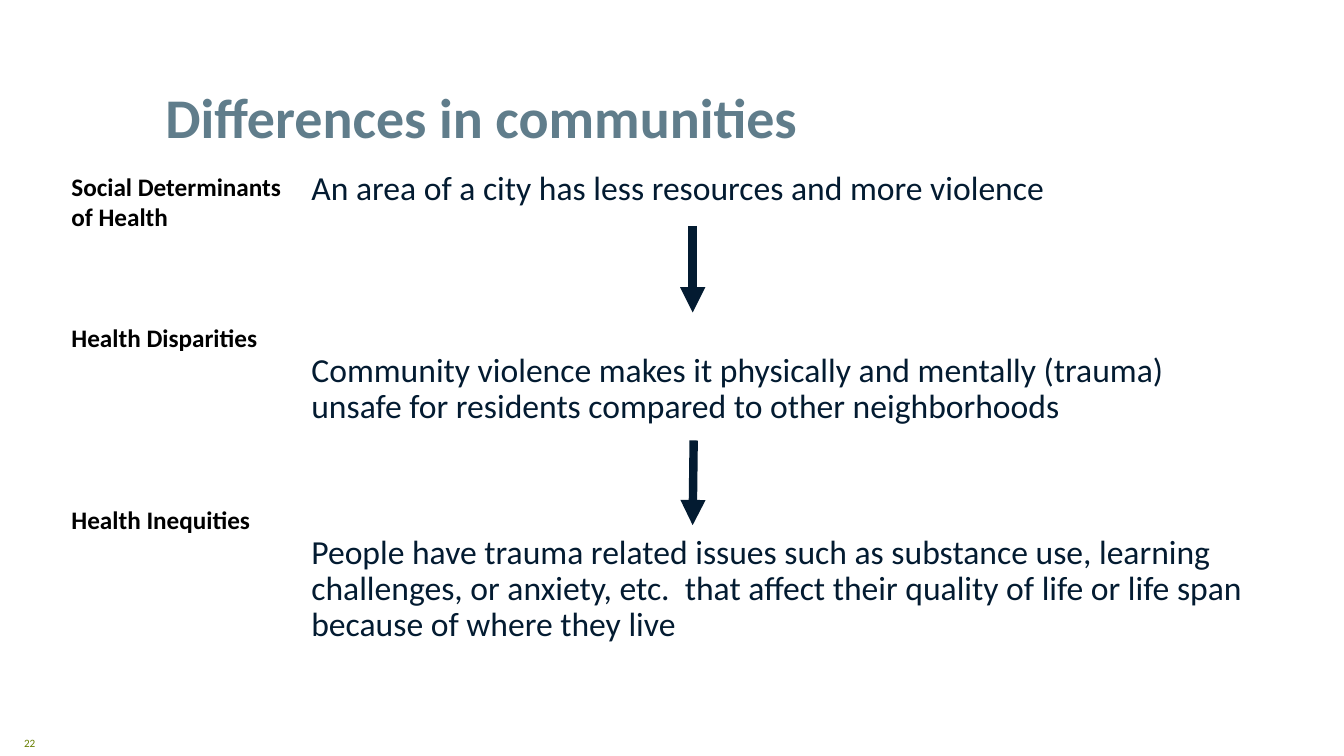
from lxml import etree
from pptx import Presentation
from pptx.dml.color import RGBColor
from pptx.enum.shapes import MSO_CONNECTOR
from pptx.enum.text import MSO_ANCHOR, MSO_AUTO_SIZE, PP_ALIGN
from pptx.oxml.ns import qn
from pptx.util import Pt

PX = 9144  # 100 px to the inch
FONT = "Calibri"
COLORS = {"title": "607D8B", "body": "031B31", "label": "000000", "page": "687F00"}
TOP, MIDDLE, BOTTOM = MSO_ANCHOR.TOP, MSO_ANCHOR.MIDDLE, MSO_ANCHOR.BOTTOM
LEFT, RIGHT = PP_ALIGN.LEFT, PP_ALIGN.RIGHT
FIXED = MSO_AUTO_SIZE.NONE
LINE = MSO_CONNECTOR.STRAIGHT

# Each paragraph is its text and the gap above it in points
LABELS = [
    ("Social Determinants", 0),
    ("of Health", 0),
    ("Health Disparities", 65),
    ("Health Inequities", 108),
]
STEPS = [
    ("An area of a city has less resources and more violence", 0),
    ("Community violence makes it physically and mentally (trauma) "
     "unsafe for residents compared to other neighborhoods", 104),
    ("People have trauma related issues such as substance use, learning "
     "challenges, or anxiety, etc.  that affect their quality of life or "
     "life span because of where they live", 78),
]
ARROWS = [(687, 224, 687, 310), (688, 437, 687, 521)]


def place(shape, box):
    shape.left, shape.top, shape.width, shape.height = (v * PX for v in box)


def write(shape, paras, size, color, bold=False, align=LEFT,
          anchor=TOP, spacing=1.0, pad=10):
    frame = shape.text_frame
    frame.word_wrap = True
    frame.auto_size = FIXED
    frame.vertical_anchor = anchor
    frame.margin_left = frame.margin_right = 10 * PX
    frame.margin_top = frame.margin_bottom = pad * PX
    for i, (text, gap) in enumerate(paras):
        para = frame.add_paragraph() if i else frame.paragraphs[0]
        para.alignment = align
        para.line_spacing = spacing
        para.space_before = Pt(gap)
        run = para.add_run()
        run.text = text
        font = run.font
        font.name, font.size, font.bold = FONT, Pt(size), bold
        font.color.rgb = RGBColor.from_string(COLORS[color])


def add_text(slide, box, paras, **style):
    shape = slide.shapes.add_textbox(*(v * PX for v in box))
    write(shape, paras, **style)


def add_arrow(slide, ends):
    arrow = slide.shapes.add_connector(LINE, *(v * PX for v in ends))
    arrow.line.width = Pt(6)
    arrow.line.color.rgb = RGBColor.from_string(COLORS["body"])
    props = arrow.line._get_or_add_ln()
    etree.SubElement(props, qn("a:tailEnd"), type="triangle")
    etree.SubElement(arrow._element.spPr, qn("a:effectLst"))


def main():
    deck = Presentation()
    deck.slide_width, deck.slide_height = 1333 * PX, 750 * PX
    slide = deck.slides.add_slide(deck.slide_layouts[5])

    # Title
    title = slide.shapes.title
    place(title, (154, 30, 1025, 129))
    write(title, [("Differences in communities", 0)], size=40,
          color="title", bold=True, anchor=BOTTOM)

    # Steps, with the page number below
    add_text(slide, (299, 160, 956, 555), STEPS, size=24,
             color="body", spacing=0.9)
    add_text(slide, (0, 725, 45, 25), [("22", 0)], size=8, color="page",
             align=RIGHT, anchor=MIDDLE, pad=5)

    # Arrows between the steps
    for ends in ARROWS:
        add_arrow(slide, ends)

    # Labels at the left
    add_text(slide, (61, 160, 238, 484), LABELS, size=18,
             color="label", bold=True)

    deck.save("out.pptx")


if __name__ == "__main__":
    main()
